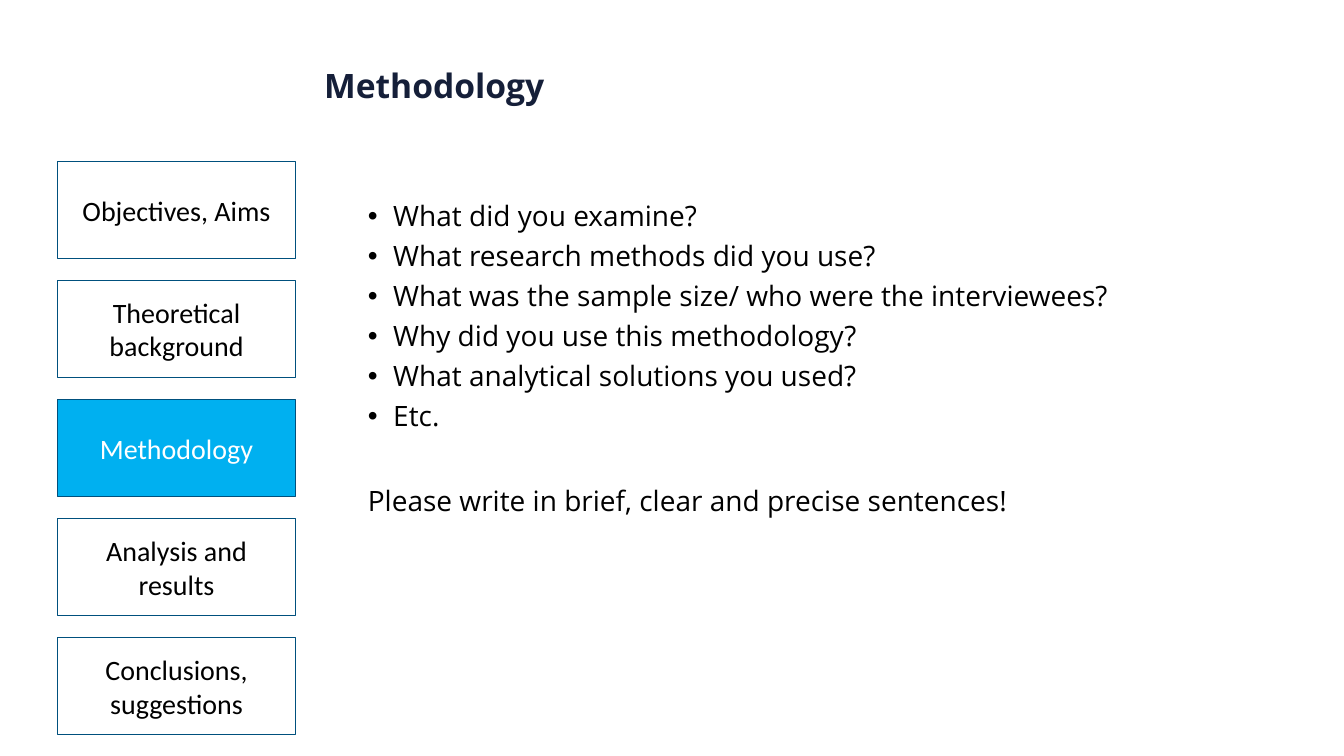
from lxml.etree import SubElement
from pptx import Presentation
from pptx.dml.color import RGBColor
from pptx.enum.shapes import MSO_SHAPE
from pptx.enum.text import MSO_ANCHOR, PP_ALIGN
from pptx.oxml.ns import qn
from pptx.util import Cm, Pt

NAVY = RGBColor(0x15, 0x1F, 0x39)
BLACK = RGBColor(0, 0, 0)
WHITE = RGBColor(0xFF, 0xFF, 0xFF)
BORDER = RGBColor(0x00, 0x50, 0x7D)
ACTIVE = RGBColor(0x00, 0xB0, 0xF0)

STEPS = ["Objectives, Aims", "Theoretical background", "Methodology",
         "Analysis and results", "Conclusions, suggestions"]
CURRENT = "Methodology"
QUESTIONS = ["What did you examine?",
             "What research methods did you use?",
             "What was the sample size/ who were the interviewees?",
             "Why did you use this methodology?",
             "What analytical solutions you used?",
             "Etc."]
ADVICE = "Please write in brief, clear and precise sentences!"

TITLE_FONT = {"name": "Open Sans", "size": Pt(24), "bold": True}
BODY_FONT = {"name": "Open Sans", "size": Pt(20)}
STEP_FONT = {"name": "Calibri", "size": Pt(20)}


def add_run(p, text, font, color):
    r = p.add_run()
    r.text = text
    for key, value in font.items():
        setattr(r.font, key, value)
    r.font.color.rgb = color


def set_bullet(p):
    pPr = p._p.get_or_add_pPr()
    indent = Cm(0.64)
    pPr.set("marL", str(indent))
    pPr.set("indent", str(-indent))
    SubElement(pPr, qn("a:buFont")).set("typeface", "Arial")
    SubElement(pPr, qn("a:buChar")).set("char", "•")


def add_textbox(s, left, top, width, height, anchor):
    tf = s.shapes.add_textbox(Cm(left), Cm(top), Cm(width), Cm(height)).text_frame
    tf.word_wrap = True
    tf.vertical_anchor = anchor
    return tf


def add_title(s, text):
    tf = add_textbox(s, 7.92, 0.51, 14.33, 2.29, MSO_ANCHOR.BOTTOM)
    p = tf.paragraphs[0]
    p.line_spacing = 0.9
    add_run(p, text, TITLE_FONT, NAVY)


def add_body(s, questions, advice):
    tf = add_textbox(s, 9.02, 4.98, 22.43, 10.24, MSO_ANCHOR.TOP)
    for i, text in enumerate(questions + [advice]):
        p = tf.paragraphs[0] if i == 0 else tf.add_paragraph()
        if i < len(questions):
            set_bullet(p)
        p.line_spacing = 0.9
        if i:
            p.space_before = Pt(7 if i < len(questions) else 38.5)
        add_run(p, text, BODY_FONT, BLACK)


def add_step(s, top, text, active):
    sp = s.shapes.add_shape(MSO_SHAPE.ROUNDED_RECTANGLE,
                            Cm(1.45), Cm(top), Cm(6), Cm(2.44))
    sp.adjustments[0] = 0
    sp.shadow.inherit = False
    sp.fill.solid()
    sp.fill.fore_color.rgb = ACTIVE if active else WHITE
    sp.line.color.rgb = BORDER
    sp.line.width = Pt(1)
    tf = sp.text_frame
    tf.word_wrap = True
    tf.vertical_anchor = MSO_ANCHOR.MIDDLE
    p = tf.paragraphs[0]
    p.alignment = PP_ALIGN.CENTER
    add_run(p, text, STEP_FONT, WHITE if active else BLACK)


def main():
    prs = Presentation()
    prs.slide_width, prs.slide_height = Cm(33.87), Cm(19.05)
    s = prs.slides.add_slide(prs.slide_layouts[6])

    # Title and questions
    add_title(s, CURRENT)
    add_body(s, QUESTIONS, ADVICE)

    # Chapter navigation, evenly spaced
    for i, text in enumerate(STEPS):
        add_step(s, 4.07 + 3 * i, text, text == CURRENT)

    prs.save("out.pptx")


if __name__ == "__main__":
    main()
